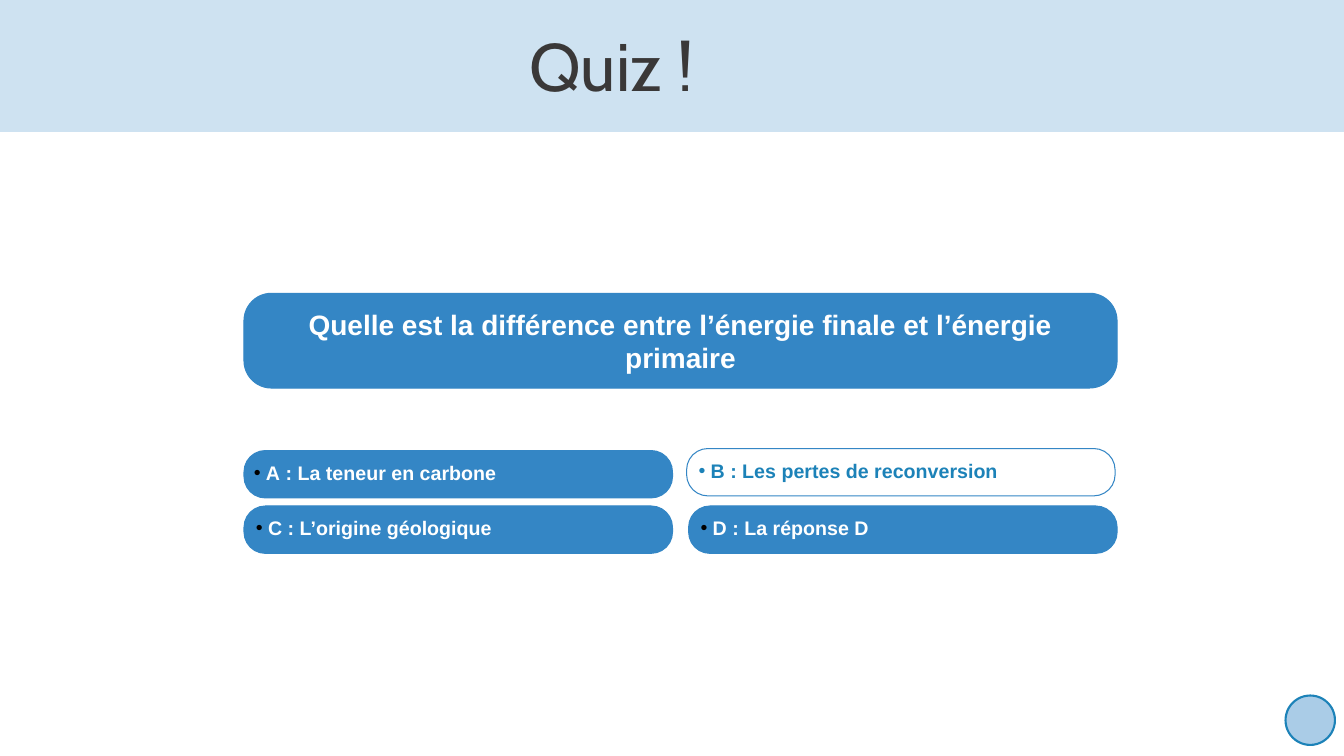
from lxml.etree import SubElement
from pptx import Presentation
from pptx.dml.color import RGBColor
from pptx.enum.shapes import MSO_SHAPE
from pptx.enum.text import MSO_ANCHOR, PP_ALIGN
from pptx.oxml.ns import qn
from pptx.util import Inches, Pt

BLUE = RGBColor(0x34, 0x86, 0xC5)
DARK_BLUE = RGBColor(0x1C, 0x82, 0xB8)
BAND_BLUE = RGBColor(0xCE, 0xE2, 0xF1)
BADGE_BLUE = RGBColor(0xAA, 0xCC, 0xE7)
DARK_GREY = RGBColor(0x3A, 0x38, 0x38)
BLACK = RGBColor(0, 0, 0)
WHITE = RGBColor(0xFF, 0xFF, 0xFF)

ANSWER_WIDTH, ANSWER_HEIGHT = 4.25, 0.47

# Answer, left, top, label indent, label width, fill, text colour, bullet colour
ANSWERS = [
    ("A\u00a0: La teneur en carbone", 2.42, 4.47, 0, 4.17, BLUE, WHITE, BLACK),
    ("C\u00a0: L’origine géologique", 2.42, 5.02, 0.02, 4.08, BLUE, WHITE, BLACK),
    ("D\u00a0: La réponse D", 6.83, 5.02, 0.02, 3.35, BLUE, WHITE, BLACK),
    ("B\u00a0: Les pertes de reconversion", 6.81, 4.45, 0.02, 4.08,
     WHITE, DARK_BLUE, DARK_BLUE),
]


def add_box(slide, kind, left, top, width, height, fill, line=None, weight=0.75):
    shape = slide.shapes.add_shape(
        kind, Inches(left), Inches(top), Inches(width), Inches(height))
    shape.shadow.inherit = False
    shape.fill.solid()
    shape.fill.fore_color.rgb = fill
    if line is None:
        shape.line.fill.background()
    else:
        shape.line.color.rgb = line
        shape.line.width = Pt(weight)
    return shape


def add_rounded_box(slide, left, top, width, height, rounding, fill):
    shape = add_box(slide, MSO_SHAPE.ROUNDED_RECTANGLE,
                    left, top, width, height, fill, BLUE)
    shape.adjustments[0] = rounding
    return shape


def add_text_box(slide, left, top, width, height):
    box = slide.shapes.add_textbox(
        Inches(left), Inches(top), Inches(width), Inches(height))
    box.text_frame.word_wrap = True
    return box


def add_bullet(paragraph, color):
    properties = paragraph._p.get_or_add_pPr()
    properties.set("marL", str(Inches(0.12)))
    properties.set("indent", str(-Inches(0.12)))
    bullet_color = SubElement(properties, qn("a:buClr"))
    SubElement(bullet_color, qn("a:srgbClr"), val=str(color))
    SubElement(properties, qn("a:buFont"), typeface="Arial")
    SubElement(properties, qn("a:buChar"), char="•")


def write(paragraph, text, font, size, color, bold=False):
    run = paragraph.add_run()
    run.text = text
    run.font.name = font
    run.font.size = Pt(size)
    run.font.bold = bold
    run.font.color.rgb = color


def write_centred(shape, text, font, size, color, bold=False):
    frame = shape.text_frame
    frame.word_wrap = True
    frame.vertical_anchor = MSO_ANCHOR.MIDDLE
    paragraph = frame.paragraphs[0]
    paragraph.alignment = PP_ALIGN.CENTER
    write(paragraph, text, font, size, color, bold)


def add_answer(slide, text, left, top, indent, label_width,
               fill, text_color, bullet_color):
    add_rounded_box(slide, left, top, ANSWER_WIDTH, ANSWER_HEIGHT, 0.45, fill)
    label = add_text_box(slide, left + indent, top + 0.05, label_width, 0.4)
    paragraph = label.text_frame.paragraphs[0]
    add_bullet(paragraph, bullet_color)
    write(paragraph, text, "Arial", 14, text_color, bold=True)


def main():
    presentation = Presentation()
    presentation.slide_width = Inches(13.33)
    presentation.slide_height = Inches(7.5)
    slide = presentation.slides.add_slide(presentation.slide_layouts[6])

    # Title band
    add_box(slide, MSO_SHAPE.RECTANGLE, 0, 0, 13.33, 1.31, BAND_BLUE)
    title = add_text_box(slide, 1.06, 0.11, 10.01, 1.07)
    write_centred(title, "Quiz !", "Cabin", 48, DARK_GREY)

    # Question
    question = add_rounded_box(slide, 2.42, 2.91, 8.66, 0.94, 0.29, BLUE)
    write_centred(
        question,
        "Quelle est la différence entre l’énergie finale et l’énergie primaire",
        "Arial", 20, WHITE, bold=True)

    # Answers
    for answer in ANSWERS:
        add_answer(slide, *answer)

    # Corner badge
    add_box(slide, MSO_SHAPE.OVAL, 12.75, 6.9, 0.49, 0.49,
            BADGE_BLUE, DARK_BLUE, 1.5)

    presentation.save("out.pptx")


if __name__ == "__main__":
    main()
